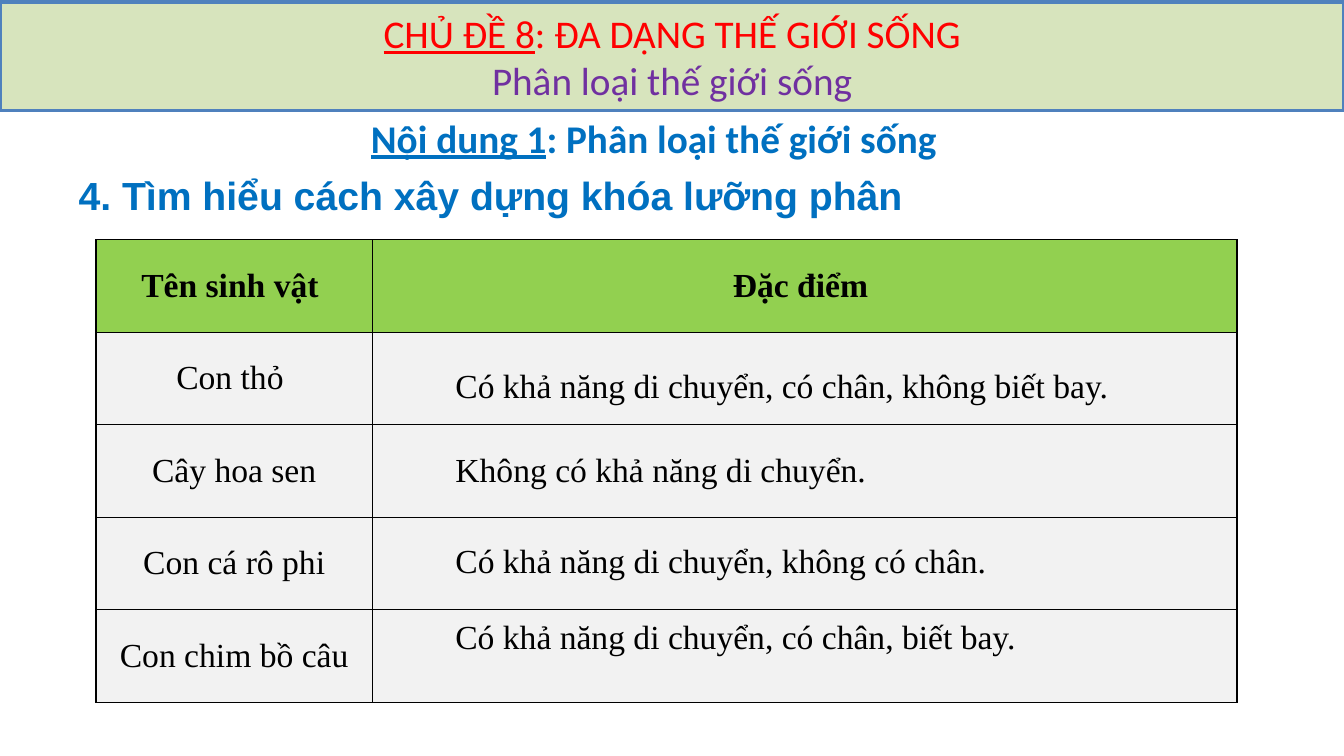
"""Build a slide that lists organisms and their features for a classification key."""
from lxml.etree import SubElement
from pptx import Presentation
from pptx.dml.color import RGBColor
from pptx.enum.shapes import MSO_SHAPE
from pptx.enum.text import MSO_ANCHOR, PP_ALIGN
from pptx.oxml.ns import qn
from pptx.util import Pt

COLORS = {
    "banner": "D7E4BD", "banner_edge": "4F81BD", "topic": "FF0000",
    "subtopic": "7030A0", "heading": "0070C0", "header_row": "92D050",
    "body_row": "F2F2F2", "ink": "000000",
}
TITLE = {"size": Pt(28), "name": "Calibri"}
HEADING = {"size": Pt(28), "name": "Calibri", "bold": True}
SECTION = {"size": Pt(28), "name": "Arial", "bold": True}
BODY = {"size": Pt(24), "name": "Times New Roman", "bold": False}


def add_run(paragraph, text, color, style, **extra):
    run = paragraph.add_run()
    run.text = text
    run.font.color.rgb = RGBColor.from_string(COLORS[color])
    for key, value in {**style, **extra}.items():
        setattr(run.font, key, value)


def add_line(left, top, width, height, align):
    frame = slide.shapes.add_textbox(Pt(left), Pt(top), Pt(width), Pt(height)).text_frame
    frame.word_wrap = True
    frame.paragraphs[0].alignment = align
    return frame.paragraphs[0]


prs = Presentation()
prs.slide_width, prs.slide_height = Pt(960), Pt(540)
slide = prs.slides.add_slide(prs.slide_layouts[6])

organisms = ["Tên sinh vật ", "Con thỏ ", "Cây hoa sen", "Con cá rô phi", "Con chim bồ câu"]
row_height = 66.1
column_widths = [197.3, 617.7]
grid = slide.shapes.add_table(
    len(organisms), 2, Pt(68.6), Pt(171.2), Pt(sum(column_widths)), Pt(row_height * len(organisms))
).table
for column, width in zip(grid.columns, column_widths):
    column.width = Pt(width)
for index, organism in enumerate(organisms):
    grid.rows[index].height = Pt(row_height)
    labels = [organism, "" if index else "Đặc điểm "]
    for cell, label in zip(grid.rows[index].cells, labels):
        cell.vertical_anchor = MSO_ANCHOR.MIDDLE
        paragraph = cell.text_frame.paragraphs[0]
        paragraph.alignment = PP_ALIGN.CENTER
        if label:
            add_run(paragraph, label, "ink", BODY, bold=index == 0)
        properties = cell._tc.get_or_add_tcPr()
        for side in ("lnL", "lnR", "lnT", "lnB"):
            border = SubElement(properties, qn(f"a:{side}"), w=str(Pt(1)))
            SubElement(SubElement(border, qn("a:solidFill")), qn("a:srgbClr"), val=COLORS["ink"])
        cell.fill.solid()
        row_color = "body_row" if index else "header_row"
        cell.fill.fore_color.rgb = RGBColor.from_string(COLORS[row_color])

content = add_line(166.3, 77.8, 601.2, 41, PP_ALIGN.CENTER)
add_run(content, "Nội dung 1", "heading", HEADING, underline=True)
add_run(content, ": Phân loại thế giới sống", "heading", HEADING)

section = add_line(49, 118.8, 834.5, 41, PP_ALIGN.JUSTIFY)
add_run(section, "4. Tìm hiểu cách xây dựng khóa lưỡng phân", "heading", SECTION)

banner = slide.shapes.add_shape(MSO_SHAPE.RECTANGLE, Pt(0), Pt(1.4), Pt(960), Pt(77.8))
banner.shadow.inherit = False
banner.fill.solid()
banner.fill.fore_color.rgb = RGBColor.from_string(COLORS["banner"])
banner.line.color.rgb = RGBColor.from_string(COLORS["banner_edge"])
banner.line.width = Pt(2.25)
banner.text_frame.word_wrap = True
banner.text_frame.vertical_anchor = MSO_ANCHOR.MIDDLE
topic = banner.text_frame.paragraphs[0]
topic.alignment = PP_ALIGN.CENTER
add_run(topic, "CHỦ ĐỀ 8", "topic", TITLE, underline=True)
add_run(topic, ": ĐA DẠNG THẾ GIỚI SỐNG", "topic", TITLE)
topic.add_line_break()
add_run(topic, "Phân loại thế giới sống", "subtopic", TITLE)

features = [
    (257, 503.3, "Có khả năng di chuyển, có chân, không biết bay."),
    (316.8, 473.8, "Không có khả năng di chuyển."),
    (382.3, 473.8, "Có khả năng di chuyển, không có chân."),
    (436.3, 468, "Có khả năng di chuyển, có chân, biết bay."),
]
for top, width, feature in features:
    add_run(add_line(318.2, top, width, 65.5, PP_ALIGN.LEFT), feature, "ink", BODY)

prs.save("out.pptx")
